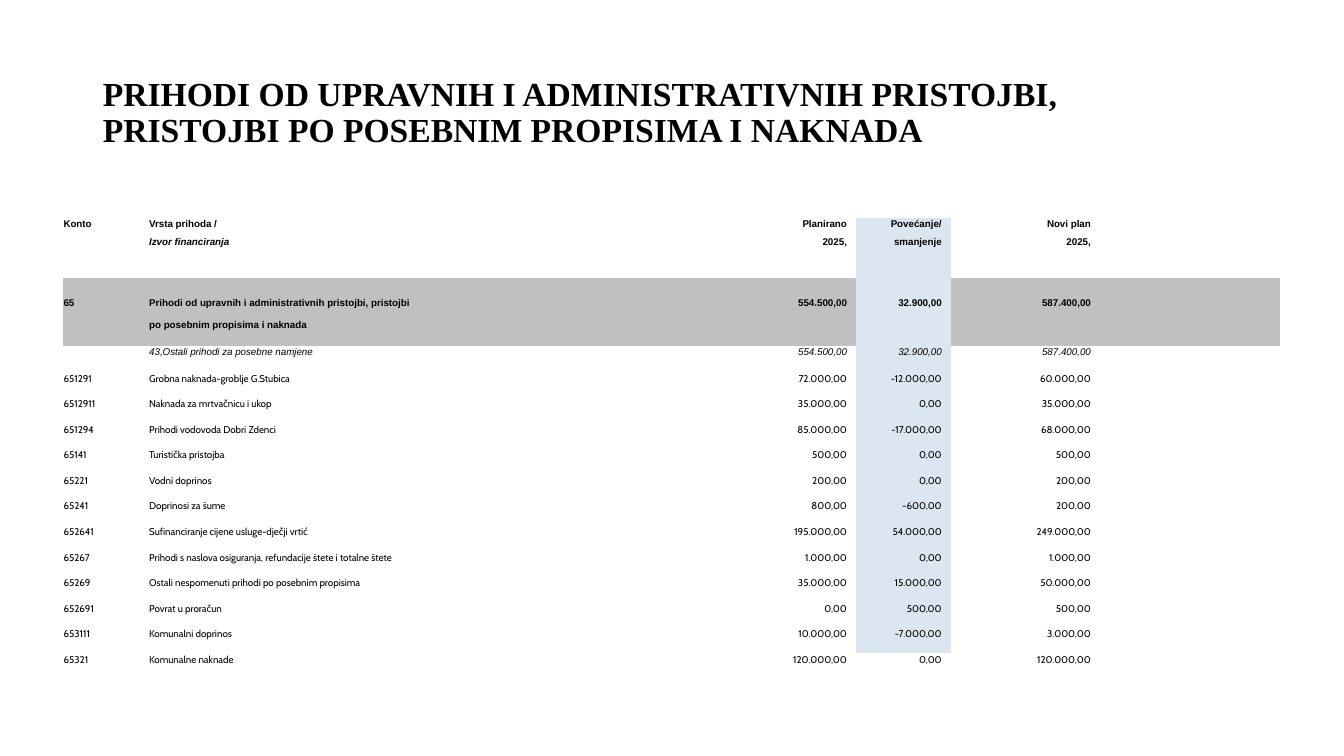
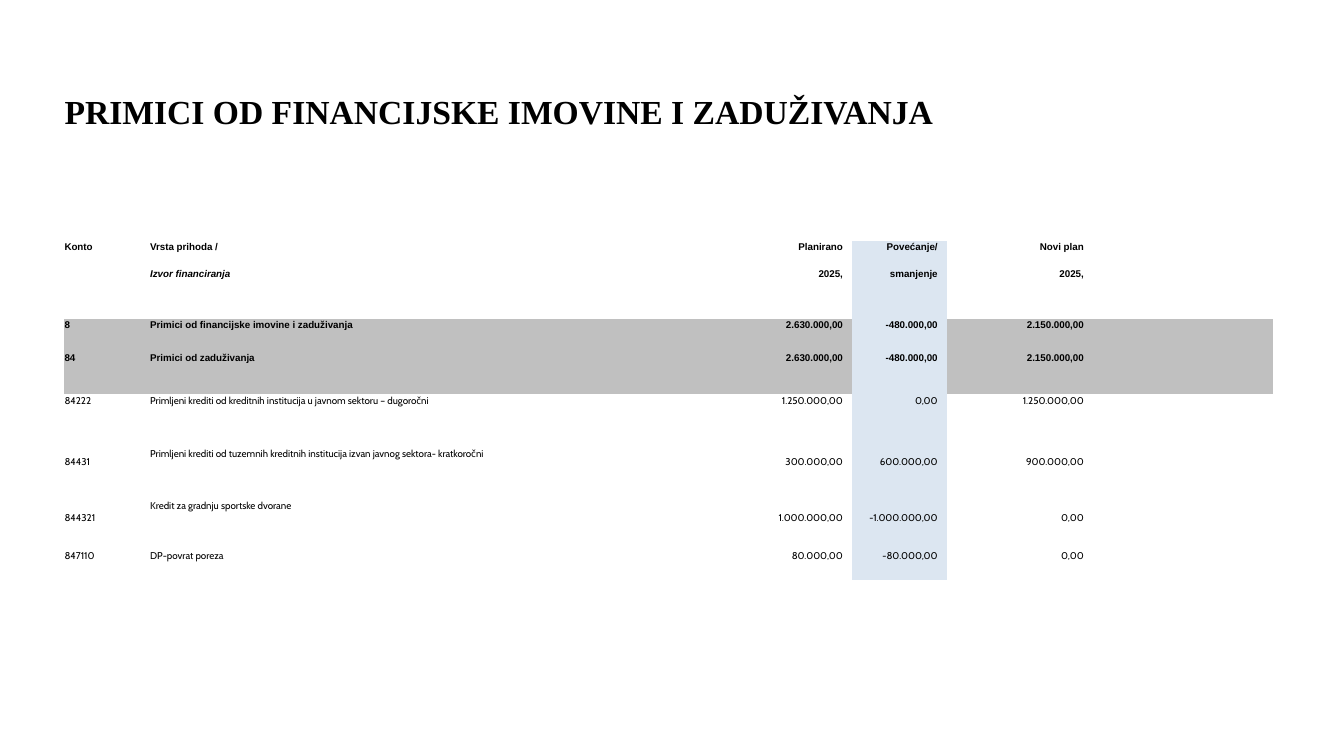
from dataclasses import dataclass
from itertools import accumulate

from lxml import etree
from pptx import Presentation
from pptx.dml.color import RGBColor
from pptx.enum.text import MSO_ANCHOR, MSO_AUTO_SIZE, PP_ALIGN
from pptx.oxml.ns import qn
from pptx.util import Inches, Pt

LEFT, RIGHT = PP_ALIGN.LEFT, PP_ALIGN.RIGHT
TOP, MIDDLE = MSO_ANCHOR.TOP, MSO_ANCHOR.MIDDLE
COLORS = {"text": "000000", "band": "C0C0C0", "change": "DCE6F1"}
TITLE_FONT, HEAD_FONT, BODY_FONT = "Times New Roman", "Arial", "Cabin"
TITLE_SIZE, TABLE_SIZE = Pt(24), Pt(7)
TITLE_TOP, TITLE_HEIGHT, TITLE_RIGHT = 0.4, 1.45, 12.42
NO_GRID_STYLE = "{2D5ABB26-0587-4C30-8999-92F81FD0307C}"
LABEL_COL, CHANGE_COL = 1, 3
INSET = 0.01
BLANK = ("",) * 5


@dataclass(frozen=True)
class Column:
    align: PP_ALIGN
    left: float = INSET
    right: float = INSET


@dataclass(frozen=True)
class RowStyle:
    font: str = BODY_FONT
    bold: bool = False
    italic: bool = False
    italic_label: bool = False
    band: bool = False
    tint_change: bool = True
    anchor: MSO_ANCHOR = TOP
    label_top: float = INSET


@dataclass(frozen=True)
class LedgerRow:
    height: float
    texts: tuple[str, ...]
    style: RowStyle


@dataclass(frozen=True)
class LedgerSlide:
    title: str
    title_left: float
    left: float
    top: float
    widths: tuple[float, ...]
    rows: list[LedgerRow]


COLUMNS = (
    Column(LEFT),
    Column(LEFT, left=0.19),
    Column(RIGHT, right=0.09),
    Column(RIGHT, right=0.09),
    Column(RIGHT, right=1.88),
)

HEADING = RowStyle(HEAD_FONT, bold=True)
SUBHEADING = RowStyle(HEAD_FONT, bold=True, italic_label=True)
GROUP = RowStyle(HEAD_FONT, bold=True, band=True)
SOURCE = RowStyle(HEAD_FONT, italic=True)
ITEM = RowStyle()
LAST_ITEM = RowStyle(tint_change=False)
LOWERED_ITEM = RowStyle(anchor=MIDDLE, label_top=0.13)


def heading_rows(first_height: float, second_height: float) -> list[LedgerRow]:
    return [
        LedgerRow(first_height, ("Konto", "Vrsta prihoda /", "Planirano",
                                 "Povećanje/", "Novi plan"), HEADING),
        LedgerRow(second_height, ("", "Izvor financiranja", "2025,",
                                  "smanjenje", "2025,"), SUBHEADING),
    ]


FEES = [
    ("651291", "Grobna naknada-groblje G.Stubica", "72.000,00", "-12.000,00", "60.000,00"),
    ("6512911", "Naknada za mrtvačnicu i ukop", "35.000,00", "0,00", "35.000,00"),
    ("651294", "Prihodi vodovoda Dobri Zdenci", "85.000,00", "-17.000,00", "68.000,00"),
    ("65141", "Turistička pristojba", "500,00", "0,00", "500,00"),
    ("65221", "Vodni doprinos", "200,00", "0,00", "200,00"),
    ("65241", "Doprinosi za šume", "800,00", "-600,00", "200,00"),
    ("652641", "Sufinanciranje cijene usluge-dječji vrtić",
     "195.000,00", "54.000,00", "249.000,00"),
    ("65267", "Prihodi s naslova osiguranja, refundacije štete i totalne štete",
     "1.000,00", "0,00", "1.000,00"),
    ("65269", "Ostali nespomenuti prihodi po posebnim propisima",
     "35.000,00", "15.000,00", "50.000,00"),
    ("652691", "Povrat u proračun", "0,00", "500,00", "500,00"),
    ("653111", "Komunalni doprinos", "10.000,00", "-7.000,00", "3.000,00"),
]
FEES_HEIGHT = 2.79

SLIDES = [
    LedgerSlide(
        "PRIHODI OD UPRAVNIH I ADMINISTRATIVNIH PRISTOJBI, "
        "PRISTOJBI PO POSEBNIM PROPISIMA I NAKNADA",
        0.92, 0.62, 2.16, (0.67, 4.91, 2.29, 0.94, 3.27),
        heading_rows(0.18, 0.42) + [
            LedgerRow(0.18, BLANK, GROUP),
            LedgerRow(0.22, ("65", "Prihodi od upravnih i administrativnih pristojbi, pristojbi",
                             "554.500,00", "32.900,00", "587.400,00"), GROUP),
            LedgerRow(0.27, ("", "po posebnim propisima i naknada", "", "", ""), GROUP),
            LedgerRow(0.26, ("", "43,Ostali prihodi za posebne namjene",
                             "554.500,00", "32.900,00", "587.400,00"), SOURCE),
            *(LedgerRow(FEES_HEIGHT / len(FEES), fee, ITEM) for fee in FEES),
            LedgerRow(0.21, ("65321", "Komunalne naknade",
                             "120.000,00", "0,00", "120.000,00"), LAST_ITEM),
        ],
    ),
    LedgerSlide(
        "PRIMICI OD FINANCIJSKE IMOVINE I ZADUŽIVANJA",
        0.54, 0.63, 2.39, (0.67, 4.88, 2.27, 0.94, 3.24),
        heading_rows(0.27, 0.5) + [
            LedgerRow(0.33, ("8", "Primici od financijske imovine i zaduživanja",
                             "2.630.000,00", "-480.000,00", "2.150.000,00"), GROUP),
            LedgerRow(0.42, ("84", "Primici od zaduživanja",
                             "2.630.000,00", "-480.000,00", "2.150.000,00"), GROUP),
            LedgerRow(0.41, ("84222", "Primljeni krediti od kreditnih institucija "
                             "u javnom sektoru – dugoročni",
                             "1.250.000,00", "0,00", "1.250.000,00"), ITEM),
            LedgerRow(0.51, ("84431", "Primljeni krediti od tuzemnih kreditnih institucija "
                             "izvan javnog sektora- kratkoročni",
                             "300.000,00", "600.000,00", "900.000,00"), LOWERED_ITEM),
            LedgerRow(0.62, ("844321", "Kredit za gradnju sportske dvorane",
                             "1.000.000,00", "-1.000.000,00", "0,00"), LOWERED_ITEM),
            LedgerRow(0.31, ("847110", "DP-povrat poreza",
                             "80.000,00", "-80.000,00", "0,00"), ITEM),
        ],
    ),
]


def style_font(font, name: str, size: Pt, bold: bool, italic: bool = False) -> None:
    font.name, font.size, font.bold, font.italic = name, size, bold, italic
    font.color.rgb = RGBColor.from_string(COLORS["text"])


def set_title(slide, ledger: LedgerSlide) -> None:
    title = slide.shapes.title
    title.left, title.top = Inches(ledger.title_left), Inches(TITLE_TOP)
    title.width = Inches(TITLE_RIGHT - ledger.title_left)
    title.height = Inches(TITLE_HEIGHT)
    frame = title.text_frame
    frame.word_wrap, frame.auto_size = True, MSO_AUTO_SIZE.NONE
    frame.vertical_anchor = MIDDLE
    paragraph = frame.paragraphs[0]
    paragraph.alignment, paragraph.line_spacing = LEFT, 0.9
    run = paragraph.add_run()
    run.text = ledger.title
    style_font(run.font, TITLE_FONT, TITLE_SIZE, bold=True)


def fill_cell(cell, text: str, col: int, style: RowStyle) -> None:
    column, is_label = COLUMNS[col], col == LABEL_COL
    cell.margin_left, cell.margin_right = Inches(column.left), Inches(column.right)
    cell.margin_top = Inches(style.label_top if is_label else INSET)
    cell.margin_bottom = 0
    cell.vertical_anchor = TOP if is_label else style.anchor

    if col == CHANGE_COL and style.tint_change:
        color = COLORS["change"]
    else:
        color = COLORS["band"] if style.band else None
    if color:
        cell.fill.solid()
        cell.fill.fore_color.rgb = RGBColor.from_string(color)
    else:
        cell.fill.background()

    paragraph = cell.text_frame.paragraphs[0]
    paragraph.alignment = column.align
    if text:
        run = paragraph.add_run()
        run.text = text
        italic = style.italic or (is_label and style.italic_label)
        style_font(run.font, style.font, TABLE_SIZE, style.bold, italic)
    else:
        # An empty cell would otherwise take the default 18 pt line height.
        end = etree.SubElement(paragraph._p, qn("a:endParaRPr"))
        end.set("sz", str(int(TABLE_SIZE.pt * 100)))


def add_ledger(slide, ledger: LedgerSlide) -> None:
    row_edges = [0, *accumulate(row.height for row in ledger.rows)]
    frame = slide.shapes.add_table(
        len(ledger.rows), len(COLUMNS), Inches(ledger.left), Inches(ledger.top),
        Inches(sum(ledger.widths)), Inches(row_edges[-1]))
    table = frame.table
    table.first_row = table.horz_banding = False
    table._tbl.tblPr.find(qn("a:tableStyleId")).text = NO_GRID_STYLE
    for column, width in zip(table.columns, ledger.widths):
        column.width = Inches(width)
    for row_index, row in enumerate(ledger.rows):
        table.rows[row_index].height = Inches(row.height)
        for col, text in enumerate(row.texts):
            fill_cell(table.cell(row_index, col), text, col, row.style)


def main() -> None:
    deck = Presentation()
    deck.slide_width, deck.slide_height = Inches(13.33), Inches(7.5)
    title_only = deck.slide_layouts[5]
    for ledger in SLIDES:
        slide = deck.slides.add_slide(title_only)
        set_title(slide, ledger)
        add_ledger(slide, ledger)
    deck.save("out.pptx")


if __name__ == "__main__":
    main()
